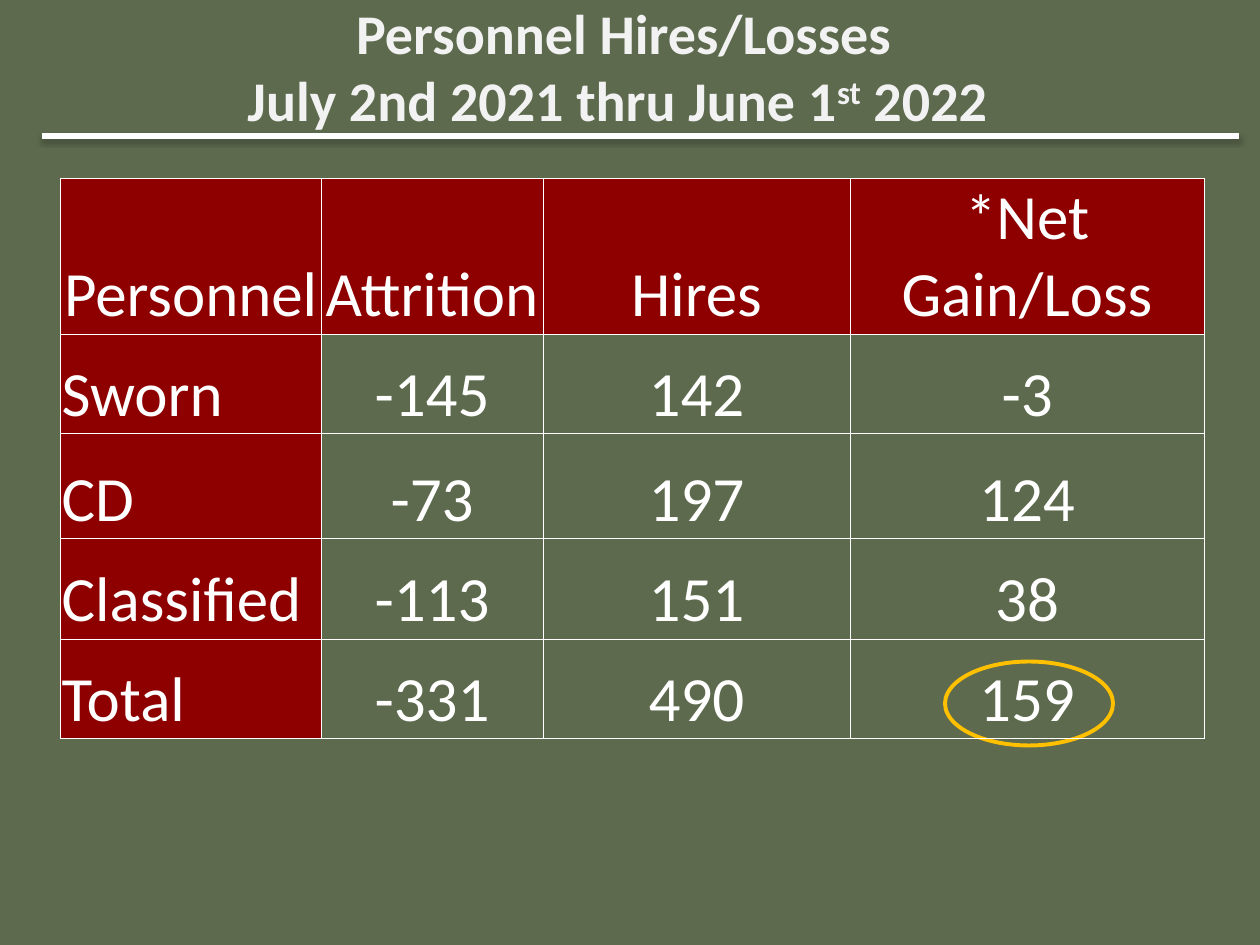
from dataclasses import dataclass

from lxml import etree
from pptx import Presentation
from pptx.dml.color import RGBColor
from pptx.enum.shapes import MSO_CONNECTOR, MSO_SHAPE
from pptx.enum.text import MSO_ANCHOR, MSO_AUTO_SIZE, PP_ALIGN
from pptx.oxml import parse_xml
from pptx.oxml.ns import nsdecls, qn
from pptx.util import Pt

CENTER, LEFT = PP_ALIGN.CENTER, PP_ALIGN.LEFT
MIDDLE, BOTTOM = MSO_ANCHOR.MIDDLE, MSO_ANCHOR.BOTTOM
NO_AUTOFIT = MSO_AUTO_SIZE.NONE
STRAIGHT = MSO_CONNECTOR.STRAIGHT
OVAL = MSO_SHAPE.OVAL
TITLE_ONLY = 5


@dataclass(frozen=True)
class Theme:
    font: str = "Calibri"
    background: str = "5D6A4E"
    title: str = "F2F2F2"
    text: str = "FFFFFF"
    rule: str = "FFFFFF"
    header: str = "8E0000"
    highlight: str = "FFC000"
    shadow: str = "000000"
    title_size: int = 32
    table_size: int = 36


class SlideBuilder:
    def __init__(self, slide, theme):
        self.slide = slide
        self.theme = theme
        fill = slide.background.fill
        fill.solid()
        fill.fore_color.rgb = RGBColor.from_string(theme.background)

    def style_paragraph(self, para, size, color, bold, align):
        para.alignment = align
        para.font.name = self.theme.font
        para.font.size = Pt(size)
        para.font.bold = bold
        para.font.color.rgb = RGBColor.from_string(color)

    def rule(self, left, top, right, weight):
        line = self.slide.shapes.add_connector(
            STRAIGHT, Pt(left), Pt(top), Pt(right), Pt(top))
        line.line.color.rgb = RGBColor.from_string(self.theme.rule)
        line.line.width = Pt(weight)
        line._element.spPr.append(parse_xml(
            f'<a:effectLst {nsdecls("a")}>'
            f'<a:outerShdw blurRad="{Pt(3.1)}" dist="{Pt(1.8)}" dir="5400000" rotWithShape="0">'
            f'<a:srgbClr val="{self.theme.shadow}"><a:alpha val="35000"/></a:srgbClr>'
            '</a:outerShdw></a:effectLst>'))

    def title(self, left, top, width, height, first_line, second_line):
        box = self.slide.shapes.title
        box.left, box.top, box.width, box.height = map(Pt, (left, top, width, height))
        frame = box.text_frame
        frame.word_wrap = True
        frame.auto_size = NO_AUTOFIT
        frame.vertical_anchor = MIDDLE
        para = frame.paragraphs[0]
        self.style_paragraph(para, self.theme.title_size, self.theme.title, True, CENTER)
        para.add_run().text = first_line
        para.add_line_break()
        for text, raised in second_line:
            span = para.add_run()
            span.text = text
            if raised:
                span._r.get_or_add_rPr().set("baseline", "30000")

    def ellipse(self, left, top, width, height, weight):
        ring = self.slide.shapes.add_shape(OVAL, Pt(left), Pt(top), Pt(width), Pt(height))
        ring.shadow.inherit = False
        ring.fill.background()
        ring.line.color.rgb = RGBColor.from_string(self.theme.highlight)
        ring.line.width = Pt(weight)

    def table(self, left, top, widths, heights, rows):
        table = self.slide.shapes.add_table(
            len(rows), len(widths), Pt(left), Pt(top), Pt(sum(widths)), Pt(sum(heights))).table
        table.first_row = table.horz_banding = False
        for column, width in zip(table.columns, widths):
            column.width = Pt(width)
        for row, height in zip(table.rows, heights):
            row.height = Pt(height)
        for r, values in enumerate(rows):
            for c, value in enumerate(values):
                self.cell(table.cell(r, c), value, r == 0 or c == 0,
                          LEFT if c == 0 and r > 0 else CENTER)

    def cell(self, cell, value, is_header, align):
        cell.margin_left = cell.margin_top = cell.margin_right = Pt(0.75)
        cell.margin_bottom = Pt(0)
        cell.vertical_anchor = BOTTOM
        cell.text = value
        self.style_paragraph(cell.text_frame.paragraphs[0], self.theme.table_size,
                             self.theme.text, False, align)
        if is_header:
            cell.fill.solid()
            cell.fill.fore_color.rgb = RGBColor.from_string(self.theme.header)
        else:
            cell.fill.background()
        properties = cell._tc.get_or_add_tcPr()
        for index, side in enumerate(("lnL", "lnR", "lnT", "lnB")):
            border = etree.Element(qn(f"a:{side}"), w=str(Pt(0.5)))
            fill = etree.SubElement(border, qn("a:solidFill"))
            etree.SubElement(fill, qn("a:srgbClr"), val=self.theme.rule)
            properties.insert(index, border)


def main():
    deck = Presentation()
    deck.slide_width, deck.slide_height = Pt(720), Pt(540)
    page = SlideBuilder(deck.slides.add_slide(deck.slide_layouts[TITLE_ONLY]), Theme())
    page.rule(24, 77.75, 708, 3)
    page.ellipse(540, 378, 96, 48, 2.25)
    page.title(32.4, 6, 648, 63, "Personnel Hires/Losses",
               [("July 2nd 2021 thru June 1", False), ("st", True), (" 2022 ", False)])
    page.table(34.5, 102, [149, 126.8, 175.5, 202.3], [88.5, 56.7, 60, 57.6, 56.7], [
        ("Personnel", "Attrition", "Hires", "*Net Gain/Loss"),
        ("Sworn", "-145", "142", "-3"),
        ("CD", "-73", "197", "124"),
        ("Classified", "-113", "151", "38"),
        ("Total", "-331", "490", "159"),
    ])
    deck.save("out.pptx")


if __name__ == "__main__":
    main()
